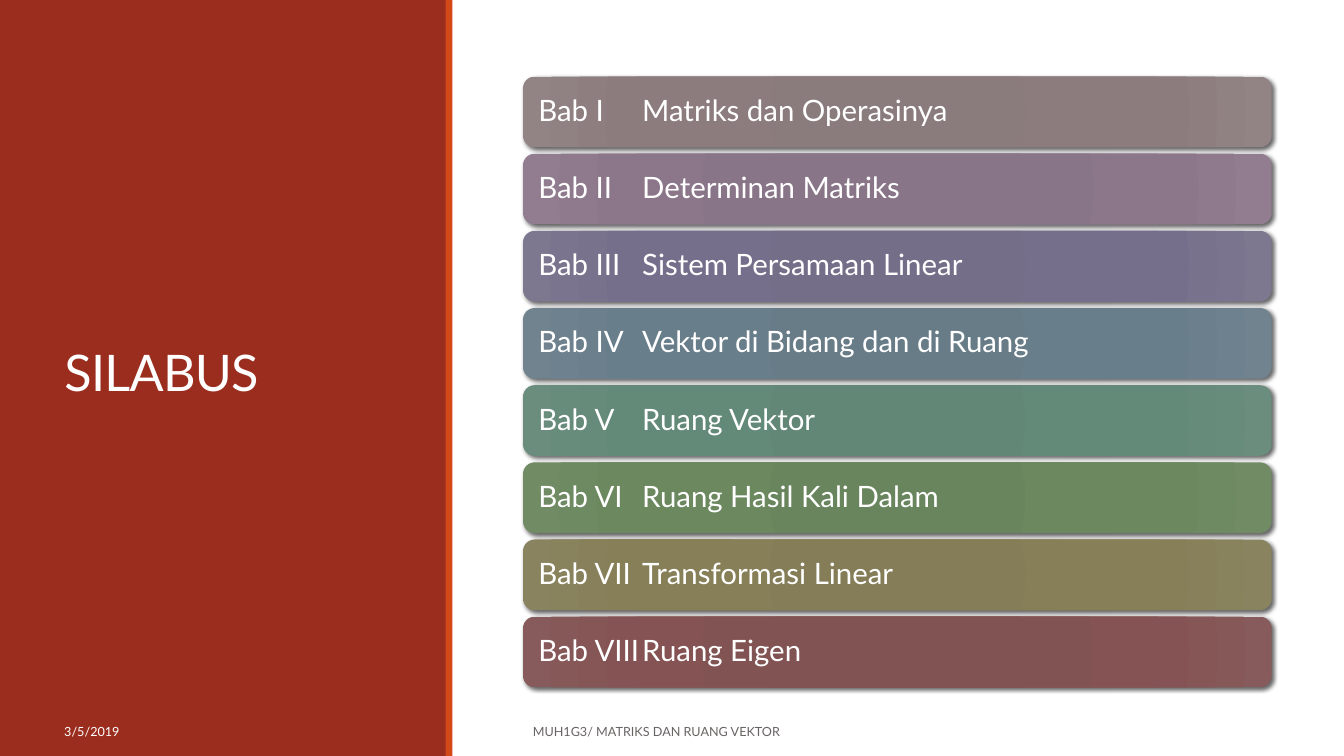
"""Build the syllabus slide: a red title panel and eight chapter bars."""
import pptx
import pptx.dml.color
import pptx.enum.shapes
import pptx.enum.text
import pptx.oxml
import pptx.oxml.ns
import pptx.util

Cm, Pt = pptx.util.Cm, pptx.util.Pt
RGB = pptx.dml.color.RGBColor.from_string
SHAPE = pptx.enum.shapes.MSO_SHAPE
MIDDLE = pptx.enum.text.MSO_ANCHOR.MIDDLE
LEFT = pptx.enum.text.PP_ALIGN.LEFT
NS = pptx.oxml.ns.nsdecls("a")

COLORS = {"panel": "9B2D1F", "stripe": "D34817", "white": "FFFFFF",
          "footer": "696464", "shadow": "000000"}
GRADIENTS = {
    "gray": "89797A 8A7B7C 8C7C7D 928384",
    "mauve": "887387 897588 8C768A 917D8F",
    "violet": "736D88 746E89 766F8B 7D7790",
    "blue": "667B87 687C88 697E8B 70838F",
    "teal": "618675 628776 638A78 6B8D7D",
    "green": "68855B 69855D 6B885E 718B65",
    "olive": "837C56 847D58 877F58 898360",
    "red": "825151 825353 855353 875B5B",
}
CHAPTERS = [
    ("Bab I", "Matriks dan Operasinya", "gray"),
    ("Bab II", "Determinan Matriks", "mauve"),
    ("Bab III", "Sistem Persamaan Linear", "violet"),
    ("Bab IV", "Vektor di Bidang dan di Ruang", "blue"),
    ("Bab V", "Ruang Vektor", "teal"),
    ("Bab VI", "Ruang Hasil Kali Dalam", "green"),
    ("Bab VII", "Transformasi Linear", "olive"),
    ("Bab VIII", "Ruang Eigen", "red"),
]


def write(shape, text, size, color):
    """Put one left-aligned, vertically centred line in a shape."""
    tf = shape.text_frame
    tf.word_wrap = True
    tf.vertical_anchor = MIDDLE
    p = tf.paragraphs[0]
    p.text = text
    p.alignment = LEFT
    font = p.runs[0].font
    font.name, font.size = "Lato", Pt(size)
    font.color.rgb = RGB(COLORS[color])
    return p


def add_shape(kind, left, top, width, height):
    """Add an outline-free shape without a shadow, measured in centimetres."""
    sp = s.shapes.add_shape(kind, Cm(left), Cm(top), Cm(width), Cm(height))
    sp.shadow.inherit = False
    sp.line.fill.background()
    return sp


prs = pptx.Presentation()
prs.slide_width, prs.slide_height = Cm(33.87), Cm(19.05)
s = prs.slides.add_slide(prs.slide_layouts[5])

for left, width, color in [(0, 11.25, "panel"), (11.23, 0.17, "stripe")]:
    sp = add_shape(SHAPE.RECTANGLE, left, 0, width, 19.05)
    sp.fill.solid()
    sp.fill.fore_color.rgb = RGB(COLORS[color])

title = s.shapes.title
title.left, title.top, title.width, title.height = Cm(1.37), Cm(1.45), Cm(8.56), Cm(16.03)
p = write(title, "SILABUS", 36, "white")
p.line_spacing = 0.85
p.runs[0].font._element.set("spc", "-50")
title.element.getparent().append(title.element)

for text, left, width, color in [
    ("3/5/2019", 1.37, 4.83, "white"),
    ("MUH1G3/ MATRIKS DAN RUANG VEKTOR", 13.18, 14.17, "footer"),
]:
    box = s.shapes.add_textbox(Cm(left), Cm(17.93), Cm(width), Cm(1.02))
    write(box, text, 9, color)

for i, (number, topic, gradient) in enumerate(CHAPTERS):
    bar = add_shape(SHAPE.ROUNDED_RECTANGLE, 13.18, 1.93 + i * 13.61 / 7, 18.87, 1.78)
    stops = "".join(
        f'<a:gs pos="{pos}000"><a:srgbClr val="{color}"/></a:gs>'
        for pos, color in zip((0, 34, 70, 100), GRADIENTS[gradient].split()))
    spPr = bar.element.spPr
    spPr.insert(2, pptx.oxml.parse_xml(
        f'<a:gradFill {NS} rotWithShape="1"><a:gsLst>{stops}</a:gsLst><a:path path="circle">'
        '<a:fillToRect l="100000" t="100000" r="100000" b="100000"/></a:path></a:gradFill>'))
    spPr.find(pptx.oxml.ns.qn("a:effectLst")).append(pptx.oxml.parse_xml(
        f'<a:outerShdw {NS} blurRad="{Pt(3)}" dist="{Pt(2)}" dir="2700000" rotWithShape="0">'
        f'<a:srgbClr val="{COLORS["shadow"]}"><a:alpha val="60000"/></a:srgbClr></a:outerShdw>'))
    p = write(bar, f"{number}\t{topic}", 21, "white")
    p.line_spacing = 0.9
    bar.text_frame.margin_left = Cm(0.3)
    p._p.get_or_add_pPr().append(pptx.oxml.parse_xml(
        f'<a:tabLst {NS}><a:tab pos="{Cm(2.62)}" algn="l"/></a:tabLst>'))

prs.save("out.pptx")
